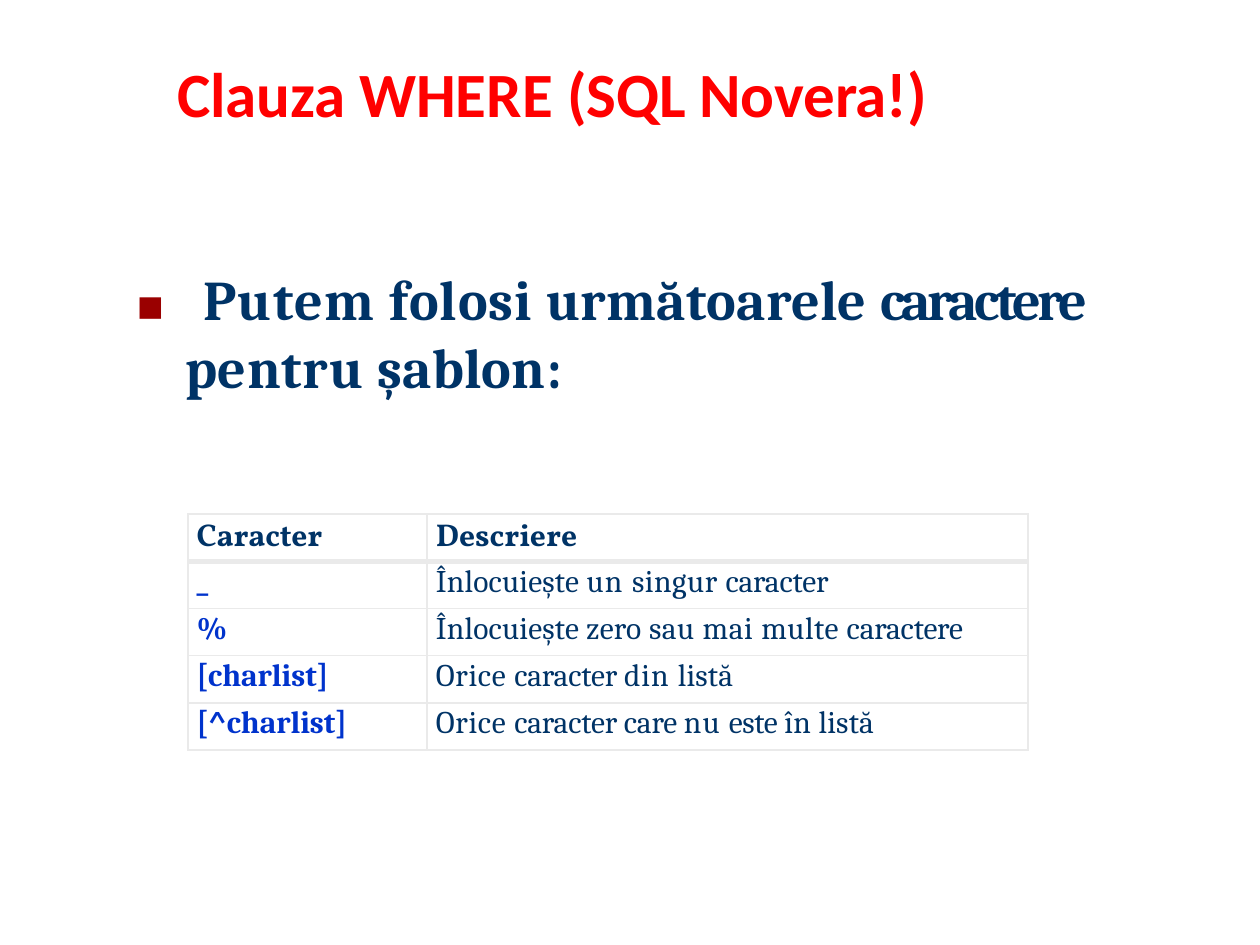
from dataclasses import dataclass

from lxml.etree import SubElement
from pptx import Presentation
from pptx.dml.color import RGBColor
from pptx.enum.text import MSO_ANCHOR as Anchor, PP_ALIGN as Align
from pptx.oxml.ns import qn
from pptx.util import Inches, Pt


@dataclass(frozen=True)
class Theme:
    red: str = "FF0000"
    bullet: str = "9A0000"
    navy: str = "003366"
    blue: str = "0033CC"
    white: str = "FFFFFF"
    border: str = "EAEAEA"
    title_size: int = 36
    body_size: int = 32
    bullet_size: int = 24
    table_size: int = 18
    thin: int = 1
    thick: int = 3


THEME = Theme()


@dataclass(frozen=True)
class Style:
    font: str
    size: int
    color: str
    bold: bool = True


@dataclass(frozen=True)
class Piece:
    """Words that share one letter spacing, in points."""
    words: str
    spacing: float = 0


@dataclass(frozen=True)
class Row:
    character: str
    description: tuple[Piece, ...]
    space_before: float = 1.4


TITLE = Style("Calibri", THEME.title_size, THEME.red)
BULLET = Style("Arial", THEME.bullet_size, THEME.bullet)
BODY = Style("Cambria", THEME.body_size, THEME.navy)
HEADER = Style("Vollkorn", THEME.table_size, THEME.navy)
SYMBOL = Style("Cambria", THEME.table_size, THEME.blue)
DESCRIPTION = Style("Cambria", THEME.table_size, THEME.navy, bold=False)

COLUMN_WIDTHS = (1.9, 4.77)
ROW_HEIGHT = 0.375
HEADINGS = (Piece("Caracter", -0.1), Piece("Descriere"))
ROWS = (
    Row("_", (Piece("Înlocuiește ", 0.1), Piece("un ", 0.7),
              Piece("singur ", 0.3), Piece("caracter", -0.1)), 1.6),
    Row("%", (Piece("Înlocuiește zero ", 0.1), Piece("sau ", 0.3), Piece("mai ", 0.4),
              Piece("multe ", 0.3), Piece("caractere", -0.1)), 1.7),
    Row("[charlist]", (Piece("Orice ", 0.4), Piece("caracter ", -0.1),
                       Piece("din ", 0.6), Piece("listă", 0.1))),
    Row("[^charlist]", (Piece("Orice ", 0.4), Piece("caracter care ", -0.1),
                        Piece("nu ", 0.6), Piece("este ", -0.2),
                        Piece("în ", 0.2), Piece("listă", 0.1))),
)


def write(paragraph, style: Style, *pieces: Piece) -> None:
    for piece in pieces:
        run = paragraph.add_run()
        run.text = piece.words
        run.font.name = style.font
        run.font.size = Pt(style.size)
        run.font.bold = style.bold
        run.font.color.rgb = RGBColor.from_string(style.color)
        run.font._element.set("spc", str(round(piece.spacing * 100)))


def lay_out(paragraph, indent: float, space_before: float) -> None:
    properties = paragraph._p.get_or_add_pPr()
    properties.set("marL", str(Inches(indent)))
    properties.set("indent", "0")
    paragraph.space_before = Pt(space_before)


def add_text_frame(slide, left: float, top: float, width: float, height: float):
    box = slide.shapes.add_textbox(Inches(left), Inches(top), Inches(width), Inches(height))
    frame = box.text_frame
    frame.word_wrap = True
    frame.margin_left = frame.margin_right = frame.margin_bottom = 0
    frame.margin_top = Inches(0.01)
    return frame


def add_title(slide) -> None:
    frame = add_text_frame(slide, 0.75, 0.42, 7.25, 0.62)
    frame.vertical_anchor = Anchor.MIDDLE
    heading = frame.paragraphs[0]
    heading.alignment = Align.CENTER
    lay_out(heading, 0.01, 1)
    write(heading, TITLE, Piece("Clauza ", -0.1), Piece("WHERE "),
          Piece("(SQL Novera!)", -0.1))


def add_introduction(slide) -> None:
    frame = add_text_frame(slide, 1.08, 2.09, 8, 1.09)
    first_line = frame.paragraphs[0]
    lay_out(first_line, 0.01, 1.1)
    write(first_line, BULLET, Piece("◼ ", 8.1))
    write(first_line, BODY, Piece("Putem ", 0.8), Piece("folosi ", 0.5),
          Piece("următoarele ", 0.2), Piece("caractere", -2))
    second_line = frame.add_paragraph()
    lay_out(second_line, 0.39, 0.3)
    write(second_line, BODY, Piece("pentru ", 0.4), Piece("șablon:", 0.2))


def set_borders(cell, top: int, bottom: int) -> None:
    properties = cell._tc.get_or_add_tcPr()
    widths = {"lnL": THEME.thin, "lnR": THEME.thin, "lnT": top, "lnB": bottom}
    for side, width in widths.items():
        line = SubElement(properties, qn(f"a:{side}"), w=str(Pt(width)))
        fill = SubElement(line, qn("a:solidFill"))
        SubElement(fill, qn("a:srgbClr"), val=THEME.border)


def fill_cell(table, row: int, column: int, style: Style,
              pieces: tuple[Piece, ...], space_before: float) -> None:
    cell = table.cell(row, column)
    set_borders(cell, top=THEME.thick if row == 1 else THEME.thin,
                bottom=THEME.thick if row == 0 else THEME.thin)
    cell.fill.solid()
    cell.fill.fore_color.rgb = RGBColor.from_string(THEME.white)
    cell.margin_left = cell.margin_right = cell.margin_bottom = 0
    cell.margin_top = Inches(0.02)
    paragraph = cell.text_frame.paragraphs[0]
    lay_out(paragraph, 0.07, space_before)
    write(paragraph, style, *pieces)


def add_wildcard_table(slide) -> None:
    row_count = len(ROWS) + 1
    table = slide.shapes.add_table(
        row_count, len(COLUMN_WIDTHS), Inches(1.49), Inches(4.08),
        Inches(sum(COLUMN_WIDTHS)), Inches(ROW_HEIGHT * row_count)).table
    for column, width in zip(table.columns, COLUMN_WIDTHS):
        column.width = Inches(width)
    for column, heading in enumerate(HEADINGS):
        fill_cell(table, 0, column, HEADER, (heading,), 1.6)
    for number, row in enumerate(ROWS, start=1):
        fill_cell(table, number, 0, SYMBOL, (Piece(row.character),), 1.4)
        fill_cell(table, number, 1, DESCRIPTION, row.description, row.space_before)


def main() -> None:
    deck = Presentation()
    deck.slide_width, deck.slide_height = Inches(10), Inches(7.5)
    slide = deck.slides.add_slide(deck.slide_layouts[6])
    add_title(slide)
    add_introduction(slide)
    add_wildcard_table(slide)
    deck.save("out.pptx")


if __name__ == "__main__":
    main()
